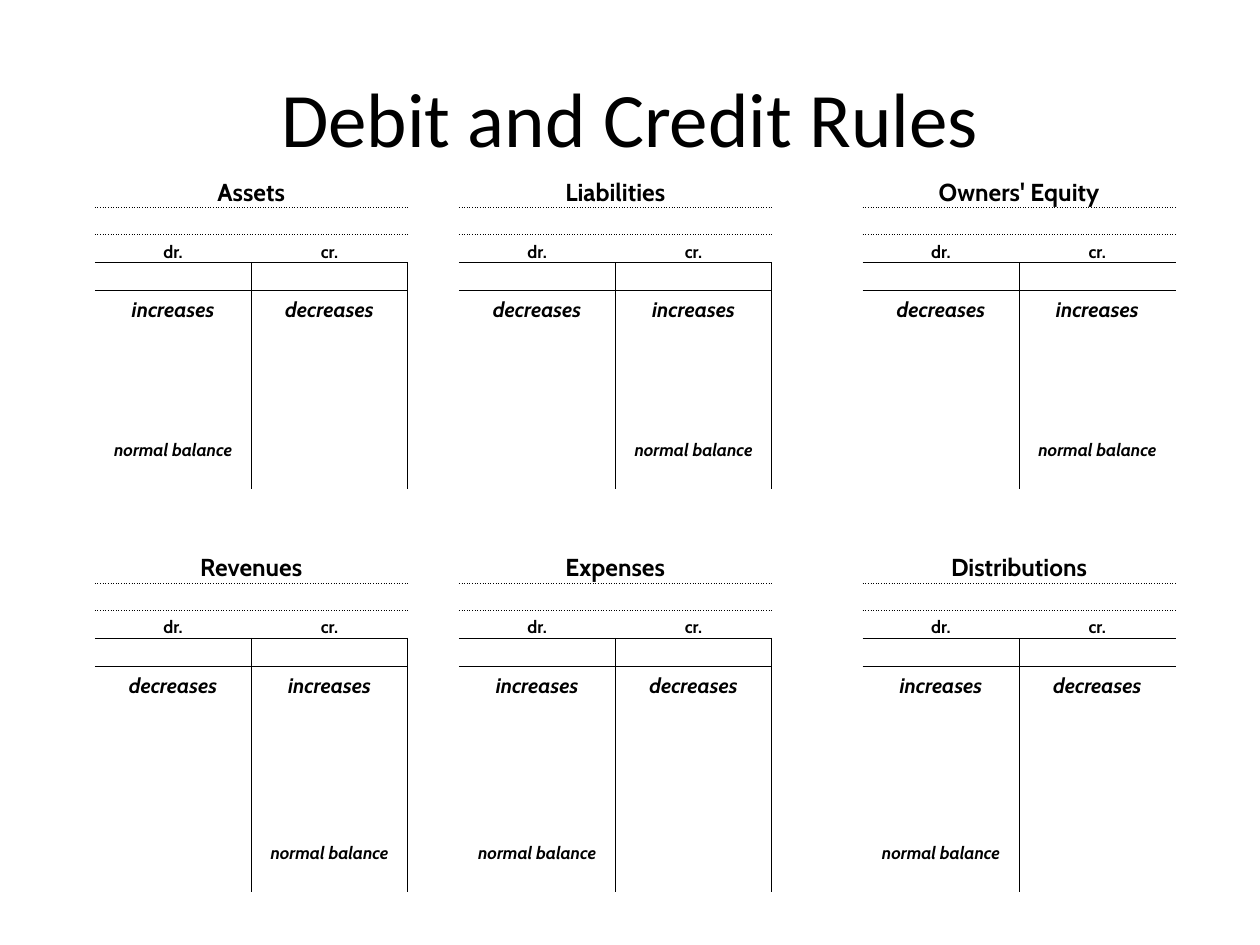
import itertools

import pptx
import pptx.dml.color
import pptx.enum.text
import pptx.oxml
import pptx.oxml.ns
import pptx.util
from lxml import etree

Pt = pptx.util.Pt
qn = pptx.oxml.ns.qn

BLACK = "000000"
NO_GRID_STYLE = "{2D5ABB26-0587-4C30-8999-92F81FD0307C}"
SIDE_WIDTH = 89.4
COLUMN_WIDTHS = [SIDE_WIDTH, SIDE_WIDTH, 29.3, SIDE_WIDTH, SIDE_WIDTH, 52, SIDE_WIDTH, SIDE_WIDTH]
ACCOUNT_COLUMNS = [0, 3, 6]
ROW_COUNT = 25
ROW_HEIGHT, NAME_HEIGHT, EFFECT_HEIGHT = 15.8, 22.4, 18.7
# First row, last row, and the accounts as (name, side that increases): 0 is debit, 1 is credit
BANDS = [
    (0, 10, [("Assets", 0), ("Liabilities", 1), ("Owners' Equity", 1)]),
    (13, 24, [("Revenues", 1), ("Expenses", 0), ("Distributions", 0)]),
]


def color(hex_string):
    return pptx.dml.color.RGBColor.from_string(hex_string)


def write_text(text_frame, text, size, font="Cabin", bold=False, italic=False):
    paragraph = text_frame.paragraphs[0]
    paragraph.alignment = pptx.enum.text.PP_ALIGN.CENTER
    run = paragraph.add_run()
    run.text = text
    run.font.name = font
    run.font.size = Pt(size)
    run.font.bold = bold
    run.font.italic = italic
    run.font.color.rgb = color(BLACK)


def add_title(slide, left, top, width, height):
    text_frame = slide.shapes.add_textbox(Pt(left), Pt(top), Pt(width), Pt(height)).text_frame
    text_frame.word_wrap = True
    text_frame.vertical_anchor = pptx.enum.text.MSO_ANCHOR.MIDDLE
    write_text(text_frame, "Debit and Credit Rules", 44, font="Calibri")


def clear_cell(cell):
    """Give an empty cell tight margins and small type, so that its row stays low."""
    cell.margin_left = cell.margin_right = cell.margin_top = Pt(0.7)
    cell.margin_bottom = Pt(0)
    cell.vertical_anchor = pptx.enum.text.MSO_ANCHOR.BOTTOM
    cell.fill.background()
    paragraph = cell.text_frame.paragraphs[0]
    etree.SubElement(paragraph._p, qn("a:endParaRPr"), sz="1000")


def set_borders(cell, edges):
    """Draw cell borders; edges maps L, R, T, B, in that order, to a dash style."""
    properties = cell._tc.get_or_add_tcPr()
    for position, (edge, dash) in enumerate(edges.items()):
        line = etree.Element(qn(f"a:ln{edge}"), w=str(Pt(0.5)))
        fill = etree.SubElement(line, qn("a:solidFill"))
        etree.SubElement(fill, qn("a:srgbClr"), val=BLACK)
        etree.SubElement(line, qn("a:prstDash"), val=dash)
        properties.insert(position, line)


def fill_account(table, first_row, last_row, column, name, increase_side):
    """Fill one T account: name, debit and credit heads, effects and normal balance."""
    name_cell = table.cell(first_row, column)
    name_cell.merge(table.cell(first_row, column + 1))
    write_text(name_cell.text_frame, name, 14, bold=True)

    for side, head in enumerate(["dr.", "cr."]):
        cells = [table.cell(row, column + side) for row in range(first_row, last_row + 1)]
        set_borders(cells[0], {"B": "sysDot"})
        set_borders(cells[1], {"T": "sysDot"})
        set_borders(cells[2], {"B": "solid"})
        stem = {"L" if side else "R": "solid"}
        set_borders(cells[3], {**stem, "T": "solid"})
        for cell in cells[4:]:
            set_borders(cell, stem)

        write_text(cells[2].text_frame, head, 10, bold=True)
        effect = "increases" if side == increase_side else "decreases"
        write_text(cells[4].text_frame, effect, 12, bold=True, italic=True)
        if side == increase_side:
            write_text(cells[-2].text_frame, "normal balance", 10, bold=True, italic=True)


def add_accounts(slide, left, top):
    frame = slide.shapes.add_table(
        ROW_COUNT, len(COLUMN_WIDTHS), Pt(left), Pt(top),
        Pt(sum(COLUMN_WIDTHS)), Pt(ROW_COUNT * ROW_HEIGHT))
    table = frame.table
    table.first_row = table.horz_banding = False
    table._tbl.tblPr.find(qn("a:tableStyleId")).text = NO_GRID_STYLE
    for column, width in zip(table.columns, COLUMN_WIDTHS):
        column.width = Pt(width)
    for row in table.rows:
        row.height = Pt(ROW_HEIGHT)
    for row, column in itertools.product(range(ROW_COUNT), range(len(COLUMN_WIDTHS))):
        clear_cell(table.cell(row, column))

    for first_row, last_row, accounts in BANDS:
        table.rows[first_row].height = Pt(NAME_HEIGHT)
        table.rows[first_row + 4].height = Pt(EFFECT_HEIGHT)
        for column, (name, increase_side) in zip(ACCOUNT_COLUMNS, accounts):
            fill_account(table, first_row, last_row, column, name, increase_side)


def main():
    presentation = pptx.Presentation()
    presentation.slide_width = Pt(720)
    presentation.slide_height = Pt(540)
    slide = presentation.slides.add_slide(presentation.slide_layouts[6])
    add_title(slide, 36, 21.6, 648, 90)
    add_accounts(slide, 54.2, 96)
    presentation.save("out.pptx")


if __name__ == "__main__":
    main()
